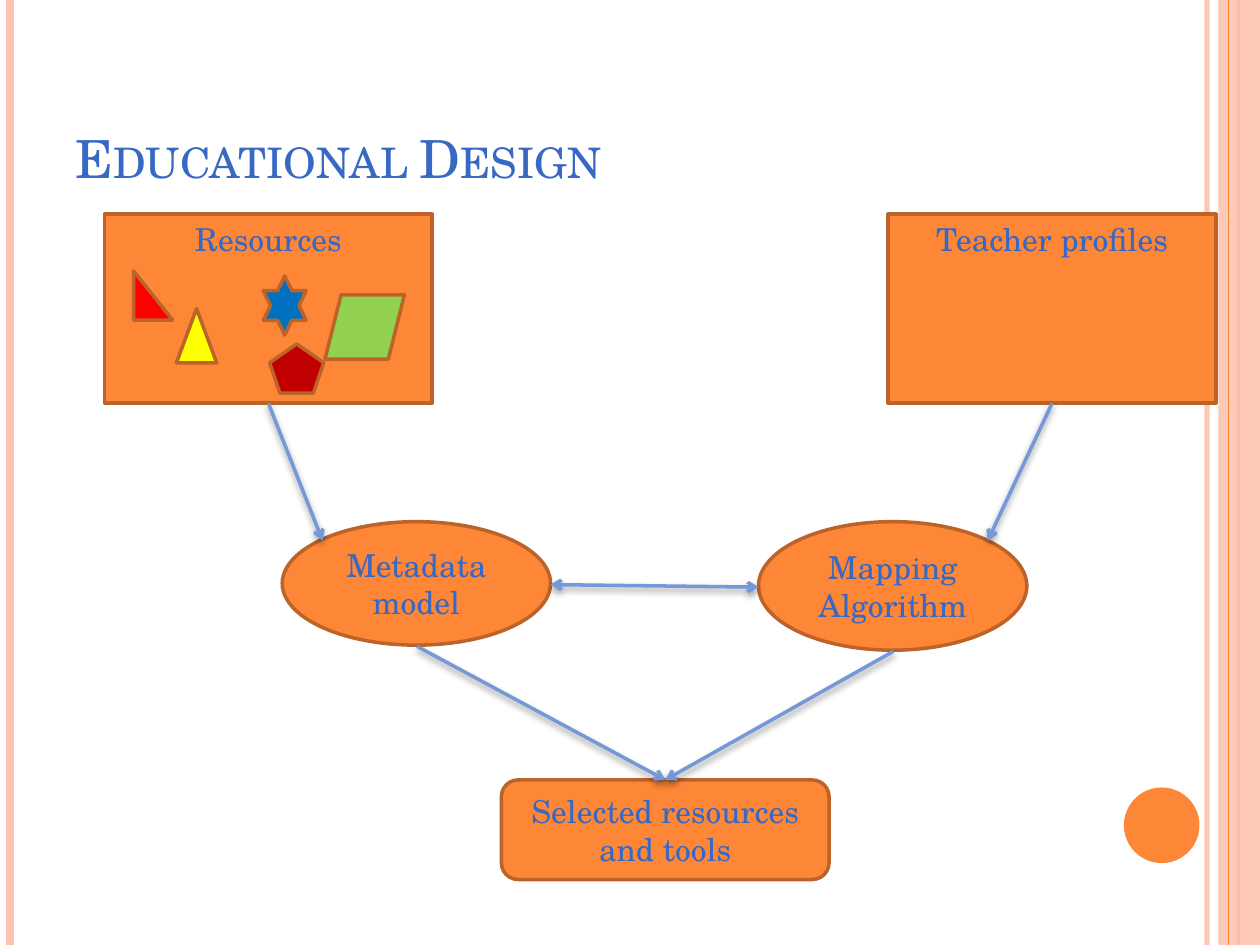
"""Build the Educational Design slide."""
import dataclasses

import pptx
import pptx.dml.color
import pptx.enum.shapes
import pptx.enum.text
import pptx.oxml
import pptx.oxml.ns
import pptx.util

Inches = pptx.util.Inches
Pt = pptx.util.Pt
Kind = pptx.enum.shapes.MSO_SHAPE
Align = pptx.enum.text.PP_ALIGN
Anchor = pptx.enum.text.MSO_ANCHOR


@dataclasses.dataclass(frozen=True)
class Theme:
    face: str = "TeX Gyre Schola"
    ink: str = "3668C4"
    main: str = "FE8637"
    edge: str = "BC6329"
    pale: str = "FEC3AE"
    link: str = "7598D9"
    title: int = 30
    body: int = 18
    stroke: int = 2


class Deck:
    def __init__(self, theme):
        self.theme = theme
        self.file = pptx.Presentation()
        self.file.slide_width = Inches(10)
        self.file.slide_height = Inches(7.5)
        self.slide = self.file.slides.add_slide(self.file.slide_layouts[6])

    def color(self, tone):
        return pptx.dml.color.RGBColor.from_string(tone)

    def xml(self, tag, body=""):
        space = pptx.oxml.ns.nsdecls("a")
        return pptx.oxml.parse_xml(f"<a:{tag} {space}>{body}</a:{tag}>")

    def fade(self, fill, part):
        node = fill._xPr.find(".//" + pptx.oxml.ns.qn("a:srgbClr"))
        alpha = self.xml("alpha")
        alpha.set("val", str(part * 1000))
        node.append(alpha)

    def text(self, frame, lines, size, align, anchor):
        frame.word_wrap = True
        frame.vertical_anchor = anchor
        for i, line in enumerate(lines):
            para = frame.add_paragraph() if i else frame.paragraphs[0]
            para.text = line
            para.alignment = align
            para.font.name = self.theme.face
            para.font.size = Pt(size)
            para.font.color.rgb = self.color(self.theme.ink)

    def title(self, words, *box):
        frame = self.slide.shapes.add_textbox(*map(Inches, box)).text_frame
        self.text(frame, [words], self.theme.title, Align.LEFT, Anchor.BOTTOM)
        frame.paragraphs[0].runs[0]._r.get_or_add_rPr().set("cap", "small")

    def shape(self, kind, box, tone, edge=True, part=100):
        item = self.slide.shapes.add_shape(kind, *map(Inches, box))
        item.shadow.inherit = False
        item.fill.solid()
        item.fill.fore_color.rgb = self.color(tone)
        if part < 100:
            self.fade(item.fill, part)
        if edge:
            item.line.color.rgb = self.color(self.theme.edge)
            item.line.width = Pt(self.theme.stroke)
        else:
            item.line.fill.background()
        return item

    def node(self, kind, box, *lines, anchor=Anchor.MIDDLE):
        item = self.shape(kind, box, self.theme.main)
        self.text(item.text_frame, lines, self.theme.body, Align.CENTER, anchor)
        return item

    def line(self, start, end, tone, width, part=100, shade=""):
        item = self.slide.shapes.add_connector(
            pptx.enum.shapes.MSO_CONNECTOR.STRAIGHT, *map(Inches, start + end))
        item.line.color.rgb = self.color(tone)
        item.line.width = Pt(width)
        if part < 100:
            self.fade(item.line.fill, part)
        item._element.spPr.append(self.xml("effectLst", shade))
        return item

    def rule(self, x, tone, width, part=100):
        self.line((x, 0), (x, 7.5), tone, width, part)

    def arrow(self, start, end, first=None, last=None, both=False):
        shade = ('<a:outerShdw blurRad="50800" dist="25400" dir="5400000">'
                 '<a:srgbClr val="000000"><a:alpha val="40000"/></a:srgbClr>'
                 '</a:outerShdw>')
        item = self.line(start, end, self.theme.link, self.theme.stroke, shade=shade)
        for tag in ("headEnd", "tailEnd") if both else ("tailEnd",):
            tip = self.xml(tag)
            tip.set("type", "arrow")
            item.line._get_or_add_ln().append(tip)
        if first:
            item.begin_connect(first, 2)
        if last:
            item.end_connect(last, 0)

    def save(self):
        self.file.save("out.pptx")


def main():
    theme = Theme()
    deck = Deck(theme)

    deck.rule(9.58, theme.pale, 3, 93)
    deck.rule(0.08, theme.pale, 4.5)
    deck.rule(9.83, theme.main, 1.5)
    deck.shape(Kind.RECTANGLE, (9.67, 0, 0.33, 7.5), theme.pale, False, 87)
    deck.rule(9.75, theme.main, 0.75)
    deck.shape(Kind.OVAL, (8.92, 6.25, 0.6, 0.6), theme.main, False)
    deck.title("Educational Design", 0.5, 0.3, 8.17, 1.25)

    tools = deck.node(Kind.ROUNDED_RECTANGLE, (3.98, 6.19, 2.6, 0.79),
                      "Selected resources", "and tools")
    store = deck.node(Kind.RECTANGLE, (0.83, 1.7, 2.6, 1.5), "Resources",
                      anchor=Anchor.TOP)
    deck.node(Kind.OVAL, (2.24, 4.14, 2.13, 0.98), "Metadata model")
    deck.node(Kind.OVAL, (6.02, 4.14, 2.13, 1.02), "Mapping Algorithm")
    staff = deck.node(Kind.RECTANGLE, (7.05, 1.7, 2.6, 1.5), "Teacher profiles",
                      anchor=Anchor.TOP)

    goal = (5.28, 6.19)
    deck.arrow((2.13, 3.2), (2.56, 4.29), first=store)
    deck.arrow((8.35, 3.2), (7.84, 4.29), first=staff)
    deck.arrow((4.37, 4.64), (6.02, 4.66), both=True)
    deck.arrow((3.31, 5.13), goal, last=tools)
    deck.arrow((7.09, 5.17), goal, last=tools)

    for kind, box, tone in (
        (Kind.ISOSCELES_TRIANGLE, (1.4, 2.45, 0.32, 0.43), "FFFF00"),
        (Kind.REGULAR_PENTAGON, (2.14, 2.73, 0.43, 0.39), "C00000"),
        (Kind.PARALLELOGRAM, (2.58, 2.34, 0.63, 0.51), "92D050"),
        (Kind.RIGHT_TRIANGLE, (1.06, 2.15, 0.31, 0.39), "FF0000"),
        (Kind.STAR_6_POINT, (2.09, 2.19, 0.34, 0.47), "0070C0"),
    ):
        deck.shape(kind, box, tone)
    deck.save()


if __name__ == "__main__":
    main()
